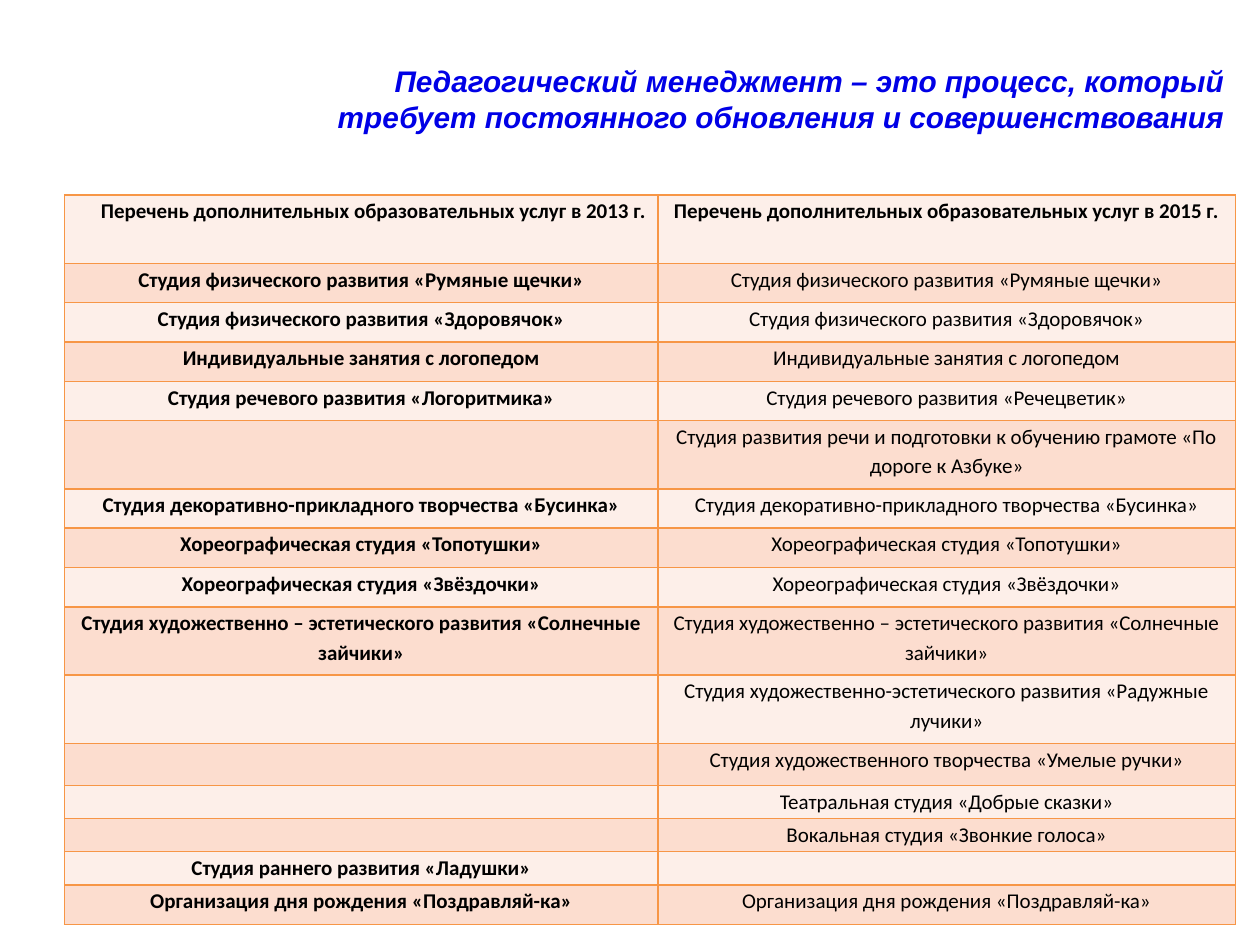
import pptx
import pptx.util
import pptx.dml.color
import pptx.enum.text
import pptx.oxml
import pptx.oxml.ns
from dataclasses import dataclass

Pt = pptx.util.Pt
RGBColor = pptx.dml.color.RGBColor
PP_ALIGN = pptx.enum.text.PP_ALIGN


@dataclass(frozen=True)
class Theme:
    title_font: str = "Arial"
    title_size: float = 17
    title_color: str = "0000E6"
    table_font: str = "Calibri"
    table_size: float = 12
    table_color: str = "000000"
    bands: tuple = ("FDEFE9", "FCDDCF")
    border_color: str = "F79646"
    border_width: float = 1


ONE_LINE, TWO_LINES, TALL, SHORT = 22.5, 39, 24, 19


def kept(height, service):
    """A service offered in both years."""
    return height, service, service


HEADER = (
    TWO_LINES,
    "Перечень дополнительных образовательных услуг в 2013 г.",
    "Перечень дополнительных образовательных услуг в 2015 г.",
)
SERVICES = [
    kept(ONE_LINE, "Студия физического развития «Румяные щечки»"),
    kept(ONE_LINE, "Студия физического развития «Здоровячок»"),
    kept(ONE_LINE, "Индивидуальные занятия с логопедом"),
    (ONE_LINE, "Студия речевого развития «Логоритмика»", "Студия речевого развития «Речецветик»"),
    (TWO_LINES, "", "Студия развития речи и подготовки к обучению грамоте «По дороге к Азбуке»"),
    kept(ONE_LINE, "Студия декоративно-прикладного творчества «Бусинка»"),
    kept(ONE_LINE, "Хореографическая студия «Топотушки»"),
    kept(ONE_LINE, "Хореографическая студия «Звёздочки»"),
    kept(TWO_LINES, "Студия художественно – эстетического развития «Солнечные зайчики»"),
    (TWO_LINES, "", "Студия художественно-эстетического развития «Радужные лучики»"),
    (TALL, "", "Студия художественного творчества «Умелые ручки»"),
    (SHORT, "", "Театральная студия «Добрые сказки»"),
    (SHORT, "", "Вокальная студия «Звонкие голоса»"),
    (SHORT, "Студия раннего развития «Ладушки»", ""),
    kept(ONE_LINE, "Организация дня рождения «Поздравляй-ка»"),
]


class SlideBuilder:
    def __init__(self, slide, theme):
        self.slide = slide
        self.theme = theme

    def set_font(self, paragraph, name, size, color, bold, italic=False):
        font = paragraph.font
        font.name, font.size = name, Pt(size)
        font.bold, font.italic = bold, italic
        font.color.rgb = RGBColor.from_string(color)

    def title(self, text, left, top, width, height):
        theme = self.theme
        title = self.slide.shapes.title
        title.left, title.top = Pt(left), Pt(top)
        title.width, title.height = Pt(width), Pt(height)
        frame = title.text_frame
        frame.text = text
        frame.word_wrap = True
        frame.auto_size = pptx.enum.text.MSO_AUTO_SIZE.NONE
        frame.vertical_anchor = pptx.enum.text.MSO_ANCHOR.MIDDLE
        frame.margin_top = Pt(13)
        paragraph = frame.paragraphs[0]
        paragraph.alignment = PP_ALIGN.RIGHT
        self.set_font(paragraph, theme.title_font, theme.title_size, theme.title_color, True, True)

    def table(self, rows, column_widths, left, top):
        """Each row is a height followed by its cell texts."""
        height = sum(row[0] for row in rows)
        table = self.slide.shapes.add_table(
            len(rows), len(column_widths),
            Pt(left), Pt(top), Pt(sum(column_widths)), Pt(height),
        ).table
        for column, width in zip(table.columns, column_widths):
            column.width = Pt(width)
        for row_index, (row_height, *texts) in enumerate(rows):
            table.rows[row_index].height = Pt(row_height)
            band = self.theme.bands[row_index % 2]
            for column_index, text in enumerate(texts):
                bold = row_index == 0 or column_index == 0
                self.cell(table.cell(row_index, column_index), text, band, bold)
        header_properties = table.cell(0, 0).text_frame.paragraphs[0]._p.get_or_add_pPr()
        header_properties.set("marL", str(Pt(14)))

    def cell(self, cell, text, band, bold):
        theme = self.theme
        cell.text = text
        cell.margin_left = cell.margin_right = Pt(3)
        cell.margin_top = cell.margin_bottom = 0
        paragraph = cell.text_frame.paragraphs[0]
        paragraph.alignment = PP_ALIGN.CENTER
        paragraph.line_spacing = 1.15
        paragraph.space_after = Pt(10)
        self.set_font(paragraph, theme.table_font, theme.table_size, theme.table_color, bold)
        self.borders(cell)
        cell.fill.solid()
        cell.fill.fore_color.rgb = RGBColor.from_string(band)

    def borders(self, cell):
        properties = cell._tc.get_or_add_tcPr()
        for side in ("lnL", "lnR", "lnT", "lnB"):
            properties.append(pptx.oxml.parse_xml(
                f'<a:{side} {pptx.oxml.ns.nsdecls("a")} w="{Pt(self.theme.border_width)}">'
                f'<a:solidFill><a:srgbClr val="{self.theme.border_color}"/></a:solidFill>'
                f'</a:{side}>'
            ))


def main():
    presentation = pptx.Presentation()
    presentation.slide_width, presentation.slide_height = Pt(720), Pt(540)
    title_only = presentation.slide_layouts[5]
    builder = SlideBuilder(presentation.slides.add_slide(title_only), Theme())
    builder.title(
        "Педагогический менеджмент – это процесс, который требует "
        "постоянного обновления и совершенствования",
        150.5, 15, 556.5, 73,
    )
    builder.table([HEADER, *SERVICES], (339, 330), 37, 111.5)
    presentation.save("out.pptx")


if __name__ == "__main__":
    main()
